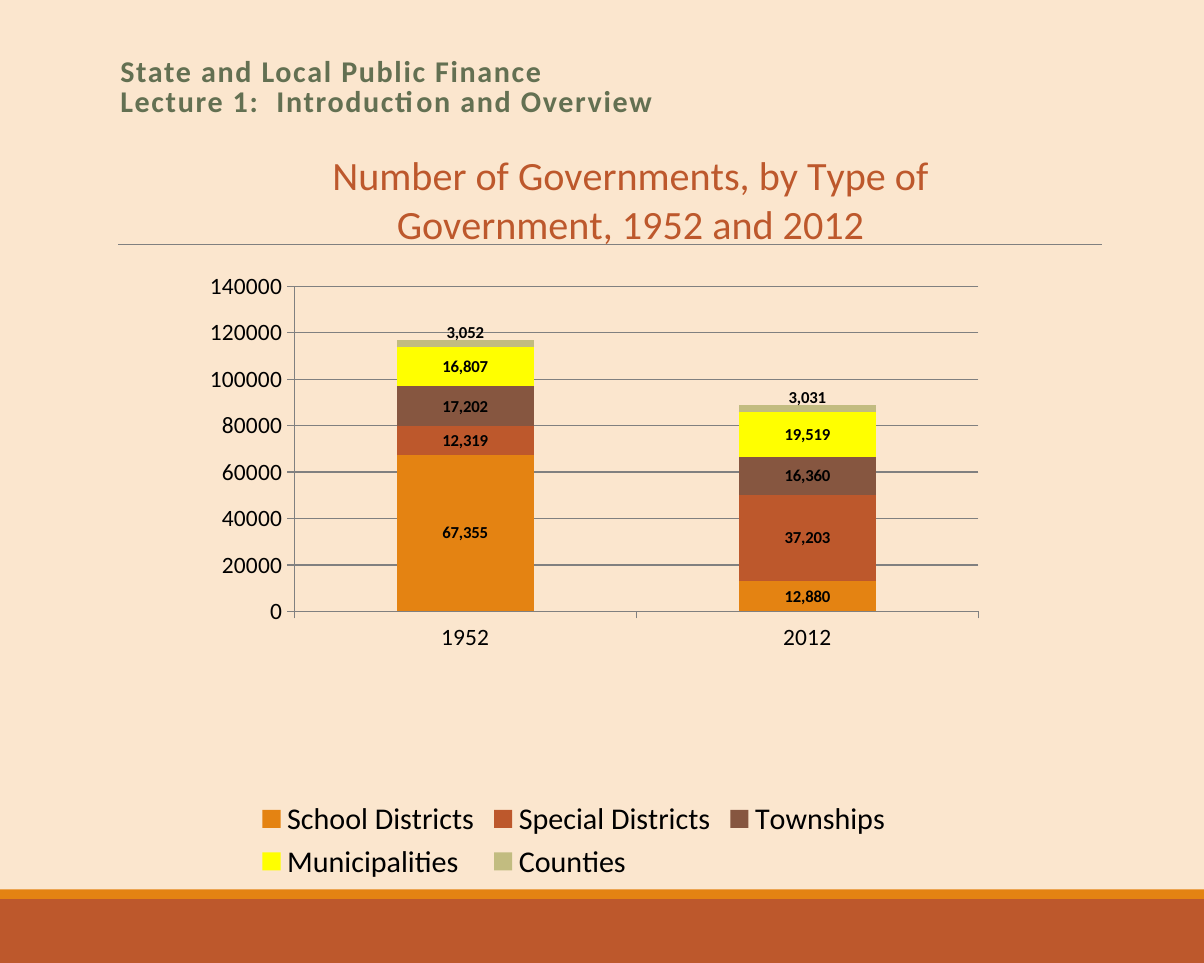
import dataclasses

import lxml.etree
import pptx
import pptx.chart.data
import pptx.dml.color
import pptx.enum.chart
import pptx.enum.shapes
import pptx.enum.text
import pptx.oxml.ns
import pptx.util

Cm = pptx.util.Cm
Pt = pptx.util.Pt
qn = pptx.oxml.ns.qn


@dataclasses.dataclass(frozen=True)
class Theme:
    font: str = "Calibri"
    background: str = "FBE6CE"
    rust: str = "BD582C"
    orange: str = "E48312"
    green: str = "637052"
    gray: str = "808080"
    black: str = "000000"
    brown: str = "865640"
    yellow: str = "FFFF00"
    khaki: str = "C2BC80"
    heading_size: int = 18
    title_size: int = 24
    legend_size: int = 18
    axis_size: int = 14
    label_size: int = 10


THEME = Theme()
YEARS = ["1952", "2012"]
GOVERNMENTS = [
    ("School Districts", (67355, 12880), THEME.orange),
    ("Special Districts", (12319, 37203), THEME.rust),
    ("Townships", (17202, 16360), THEME.brown),
    ("Municipalities", (16807, 19519), THEME.yellow),
    ("Counties", (3052, 3031), THEME.khaki),
]
LABEL_FORMAT = "#,##0"


def rgb(color):
    return pptx.dml.color.RGBColor.from_string(color)


def set_font(font, size, color, bold=False):
    font.name = THEME.font
    font.size = Pt(size)
    font.bold = bold
    font.color.rgb = rgb(color)


def set_line(line, width):
    line.color.rgb = rgb(THEME.gray)
    line.width = Pt(width)


def set_layout(parent, index, modes, **percents):
    layout = parent.find(qn("c:layout"))
    if layout is None:
        layout = parent.makeelement(qn("c:layout"))
        parent.insert(index, layout)
    manual = lxml.etree.SubElement(layout, qn("c:manualLayout"))
    shares = {name: f"{percent / 100:.3f}" for name, percent in percents.items()}
    for name, value in {**modes, **shares}.items():
        lxml.etree.SubElement(manual, qn("c:" + name)).set("val", value)


def add_band(slide, top, height, color):
    sp = slide.shapes.add_shape(
        pptx.enum.shapes.MSO_SHAPE.RECTANGLE, 0, Cm(top), Cm(25.4), Cm(height))
    sp.shadow.inherit = False
    sp.fill.solid()
    sp.fill.fore_color.rgb = rgb(color)
    sp.line.fill.background()


def add_rule(slide, left, right, y):
    line = slide.shapes.add_connector(
        pptx.enum.shapes.MSO_CONNECTOR.STRAIGHT, Cm(left), Cm(y), Cm(right), Cm(y))
    set_line(line.line, 0.5)
    lxml.etree.SubElement(line._element.spPr, qn("a:effectLst"))


def add_heading(slide, text):
    sp = slide.shapes.add_textbox(Cm(2.29), Cm(0.84), Cm(20.96), Cm(1.8))
    tf = sp.text_frame
    tf.word_wrap = True
    tf.vertical_anchor = pptx.enum.text.MSO_ANCHOR.BOTTOM
    p = tf.paragraphs[0]
    p.line_spacing = 0.85
    for i, line in enumerate(text.split("\n")):
        if i:
            p.add_line_break()
        p.add_run().text = line
    set_font(p.font, THEME.heading_size, THEME.green, bold=True)
    p._p.get_or_add_pPr().get_or_add_defRPr().set("spc", "100")


def set_title(chart, text):
    p = chart.chart_title.text_frame.paragraphs[0]
    p.add_run().text = text
    set_font(p.font, THEME.title_size, THEME.rust)
    set_layout(chart.chart_title._element, 1,
               {"xMode": "edge", "yMode": "edge"}, x=19.6, y=2)


def style_axes(chart):
    for axis in (chart.category_axis, chart.value_axis):
        axis.major_tick_mark = pptx.enum.chart.XL_TICK_MARK.OUTSIDE
        axis.minor_tick_mark = pptx.enum.chart.XL_TICK_MARK.NONE
        set_font(axis.tick_labels.font, THEME.axis_size, THEME.black)
        set_line(axis.format.line, 0.75)
    axis = chart.value_axis
    axis.minimum_scale, axis.maximum_scale, axis.major_unit = 0, 140000, 20000
    axis.tick_labels.number_format = "0"
    axis.tick_labels.number_format_is_linked = False
    axis.has_major_gridlines = True
    set_line(axis.major_gridlines.format.line, 0.75)


def style_series(series, color):
    series.format.fill.solid()
    series.format.fill.fore_color.rgb = rgb(color)
    labels = series.data_labels
    labels.show_value = True
    labels.number_format = LABEL_FORMAT
    labels.number_format_is_linked = False
    set_font(labels.font, THEME.label_size, THEME.black, bold=True)


def raise_label(series, index, percent):
    set_font(series.points[index].data_label.font, THEME.label_size, THEME.black, bold=True)
    label = series.data_labels._element.findall(qn("c:dLbl"))[index]
    set_layout(label, 1, {}, x=0, y=-percent)
    fmt = label.makeelement(qn("c:numFmt"), {"formatCode": LABEL_FORMAT, "sourceLinked": "0"})
    label.insert(2, fmt)


def add_government_chart(slide):
    data = pptx.chart.data.CategoryChartData(number_format=LABEL_FORMAT)
    data.categories = YEARS
    for name, values, _ in GOVERNMENTS:
        data.add_series(name, values)
    chart = slide.shapes.add_chart(
        pptx.enum.chart.XL_CHART_TYPE.COLUMN_STACKED,
        Cm(3.48), Cm(2.66), Cm(17.25), Cm(16.03), data).chart
    set_font(chart.font, THEME.label_size, THEME.black)
    set_title(chart, "Number of Governments, by Type of Government, 1952 and 2012")
    style_axes(chart)
    chart.has_legend = True
    chart.legend.position = pptx.enum.chart.XL_LEGEND_POSITION.BOTTOM
    chart.legend.include_in_layout = False
    set_font(chart.legend.font, THEME.legend_size, THEME.black)
    plot = chart.plots[0]
    plot.gap_width, plot.overlap, plot.vary_by_categories = 150, 100, False
    for series, (_, _, color) in zip(plot.series, GOVERNMENTS):
        style_series(series, color)
    counties = plot.series[len(GOVERNMENTS) - 1]
    for index in range(len(YEARS)):
        raise_label(counties, index, 1.4)
    set_layout(chart._chartSpace.chart.plotArea, 0,
               {"layoutTarget": "inner", "xMode": "edge", "yMode": "edge"},
               x=15.8, y=21.1, w=83.7, h=42.8)


def main():
    prs = pptx.Presentation()
    prs.slide_width, prs.slide_height = Cm(25.4), Cm(20.32)
    slide = prs.slides.add_slide(prs.slide_layouts[6])
    slide.background.fill.solid()
    slide.background.fill.fore_color.rgb = rgb(THEME.background)
    add_band(slide, 18.97, 1.35, THEME.rust)
    add_band(slide, 18.77, 0.2, THEME.orange)
    add_rule(slide, 2.49, 23.24, 5.16)
    add_government_chart(slide)
    add_heading(slide, "State and Local Public Finance\nLecture 1:  Introduction and Overview")
    prs.save("out.pptx")


if __name__ == "__main__":
    main()
